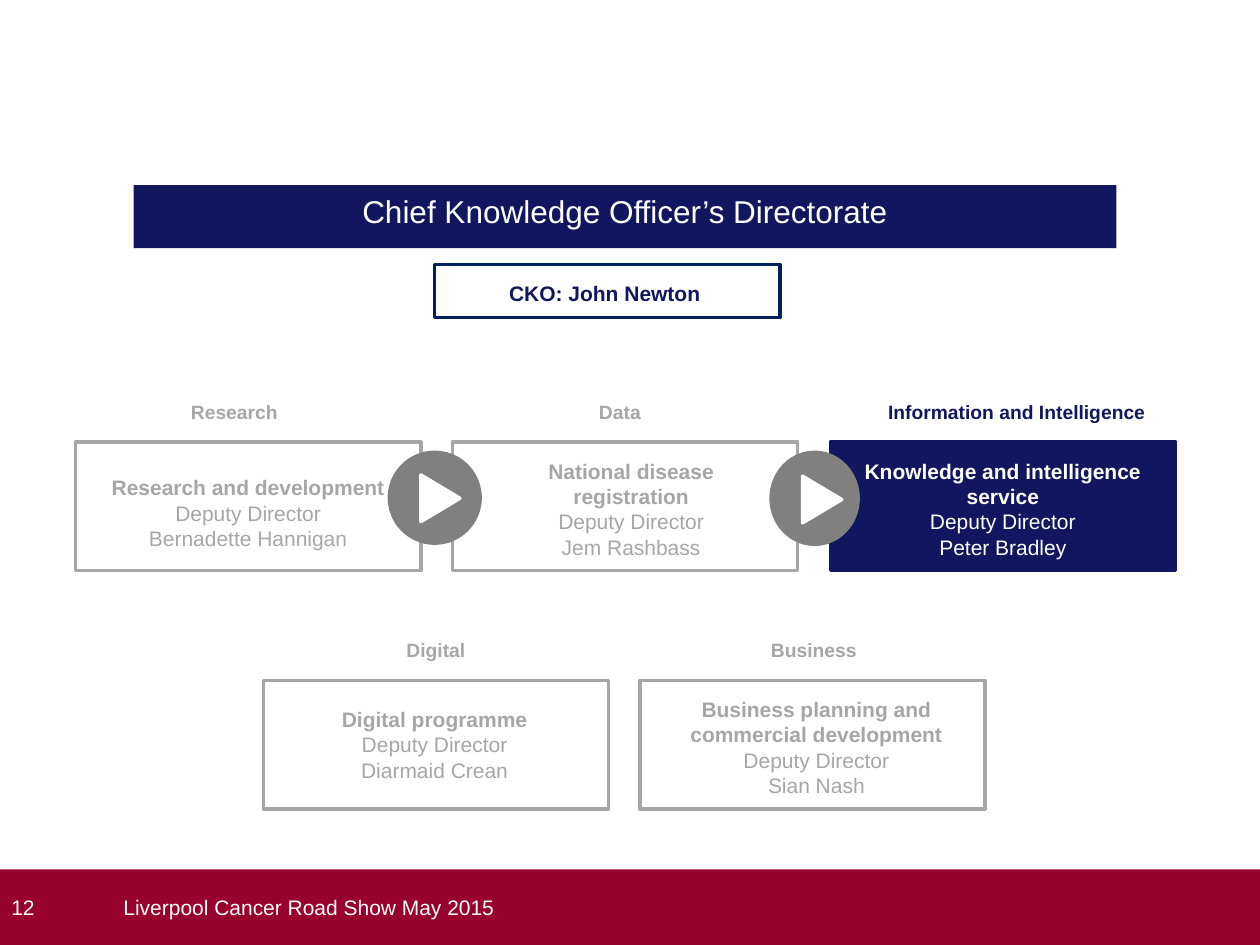
"""Builds the directorate structure slide."""
from lxml.etree import SubElement
from pptx import Presentation
from pptx.dml.color import RGBColor
from pptx.enum.shapes import MSO_SHAPE as SHAPE
from pptx.enum.text import MSO_ANCHOR as ANCHOR, MSO_AUTO_SIZE as AUTO, PP_ALIGN as ALIGN
from pptx.oxml.ns import qn
from pptx.util import Inches, Pt

NAVY = RGBColor(0x11, 0x17, 0x5E)
DARK_BLUE = RGBColor(0x00, 0x20, 0x60)
GREY = RGBColor(0xA6, 0xA6, 0xA6)
MID_GREY = RGBColor(0x80, 0x80, 0x80)
WHITE = RGBColor(0xFF, 0xFF, 0xFF)
CRIMSON = RGBColor(0x98, 0x00, 0x2E)
BOX_W, BOX_H, TEXT_W = 2.74, 1.02, 2.6


def place(s, at):
    s.left, s.top, s.width, s.height = (Inches(v) for v in at)


def add_shape(slide, kind, at, fill=None, line=None, rotation=0):
    s = slide.shapes.add_shape(kind, *(Inches(v) for v in at))
    s.shadow.inherit = False
    s.rotation = rotation
    if fill is None:
        s.fill.background()
    else:
        s.fill.solid()
        s.fill.fore_color.rgb = fill
    if line is None:
        s.line.fill.background()
    else:
        s.line.color.rgb = line
        s.line.width = Pt(2)
        SubElement(s.line._get_or_add_ln(), qn("a:round"))
    return s


def add_run(p, text, size, color, bold=False):
    r = p.add_run()
    r.text = text
    r.font.name = "Arial"
    r.font.size = Pt(size)
    r.font.bold = bold
    r.font.color.rgb = color


def add_text(slide, at, size, color, heading, details=(), before=0):
    tf = slide.shapes.add_textbox(*(Inches(v) for v in at)).text_frame
    tf.word_wrap = True
    p = tf.paragraphs[0]
    p.alignment = ALIGN.CENTER
    p.space_before = Pt(before)
    for i, line in enumerate(heading.split("\n")):
        if i:
            p.add_line_break()
        add_run(p, line, size, color, True)
    for line in details:
        p = tf.add_paragraph()
        p.alignment = ALIGN.CENTER
        add_run(p, line, size, color)


def add_title(slide, text):
    s = slide.shapes.title
    place(s, (1.06, 1.47, 7.8, 0.5))
    s.fill.solid()
    s.fill.fore_color.rgb = NAVY
    tf = s.text_frame
    tf.auto_size = AUTO.NONE
    tf.vertical_anchor = ANCHOR.TOP
    p = tf.paragraphs[0]
    p.alignment = ALIGN.CENTER
    p.space_after = Pt(6)
    add_run(p, text, 18, WHITE)


def add_footer(slide, number, text):
    bar = add_shape(slide, SHAPE.RECTANGLE, (0, 6.9, 10, 0.6), CRIMSON)
    label = slide.shapes.add_textbox(Inches(0.98), Inches(6.9), Inches(8.43), Inches(0.6))
    for s, content, indent in ((bar, number, 0.09), (label, text, 0)):
        tf = s.text_frame
        tf.margin_left = Inches(indent)
        tf.margin_right = tf.margin_top = tf.margin_bottom = 0
        tf.vertical_anchor = ANCHOR.MIDDLE
        p = tf.paragraphs[0]
        p.alignment = ALIGN.LEFT
        add_run(p, content, 12, WHITE)


def add_play(slide, circle, triangle):
    add_shape(slide, SHAPE.FLOWCHART_CONNECTOR, circle, MID_GREY, MID_GREY)
    add_shape(slide, SHAPE.ISOSCELES_TRIANGLE, triangle, WHITE, WHITE, 90)


def main():
    prs = Presentation()
    prs.slide_width, prs.slide_height = Inches(10), Inches(7.5)
    slide = prs.slides.add_slide(prs.slide_layouts[5])
    add_title(slide, "Chief Knowledge Officer’s Directorate")
    add_footer(slide, "12", "Liverpool Cancer Road Show May 2015")
    add_shape(slide, SHAPE.RECTANGLE, (3.45, 2.1, BOX_W, 0.42), line=DARK_BLUE)
    add_text(slide, (3.5, 2.18, TEXT_W, 0.3), 12, NAVY, "CKO: John Newton", before=6)

    # label, label left, label width, box left, box top, text left, text top, heading, person, active
    units = [
        ("Research", 0.6, 2.52, 0.6, 3.51, 0.67, 3.72,
         "Research and development", "Bernadette Hannigan", False),
        ("Data", 3.66, 2.52, 3.59, 3.51, 3.71, 3.59,
         "National disease\nregistration", "Jem Rashbass", False),
        ("Information and Intelligence", 6.81, 2.52, 6.59, 3.51, 6.66, 3.59,
         "Knowledge and intelligence service", "Peter Bradley", True),
        ("Digital", 2.09, 2.74, 2.09, 5.4, 2.15, 5.56,
         "Digital programme", "Diarmaid Crean", False),
        ("Business", 5.16, 2.6, 5.08, 5.4, 5.18, 5.48,
         "Business planning and commercial development", "Sian Nash", False),
    ]
    for label, label_x, label_w, x, y, text_x, text_y, heading, person, active in units:
        color = NAVY if active else GREY
        add_shape(slide, SHAPE.RECTANGLE, (x, y, BOX_W, BOX_H), NAVY if active else None, color)
        add_text(slide, (label_x, y - 0.38, label_w, 0.29), 11, color, label)
        add_text(slide, (text_x, text_y, TEXT_W, 0.9), 12, WHITE if active else GREY,
                 heading, ("Deputy Director", person))

    add_play(slide, (3.09, 3.59, 0.72, 0.72), (3.31, 3.8, 0.37, 0.31))
    add_play(slide, (6.12, 3.59, 0.69, 0.73), (6.34, 3.81, 0.37, 0.31))
    prs.save("out.pptx")


if __name__ == "__main__":
    main()
